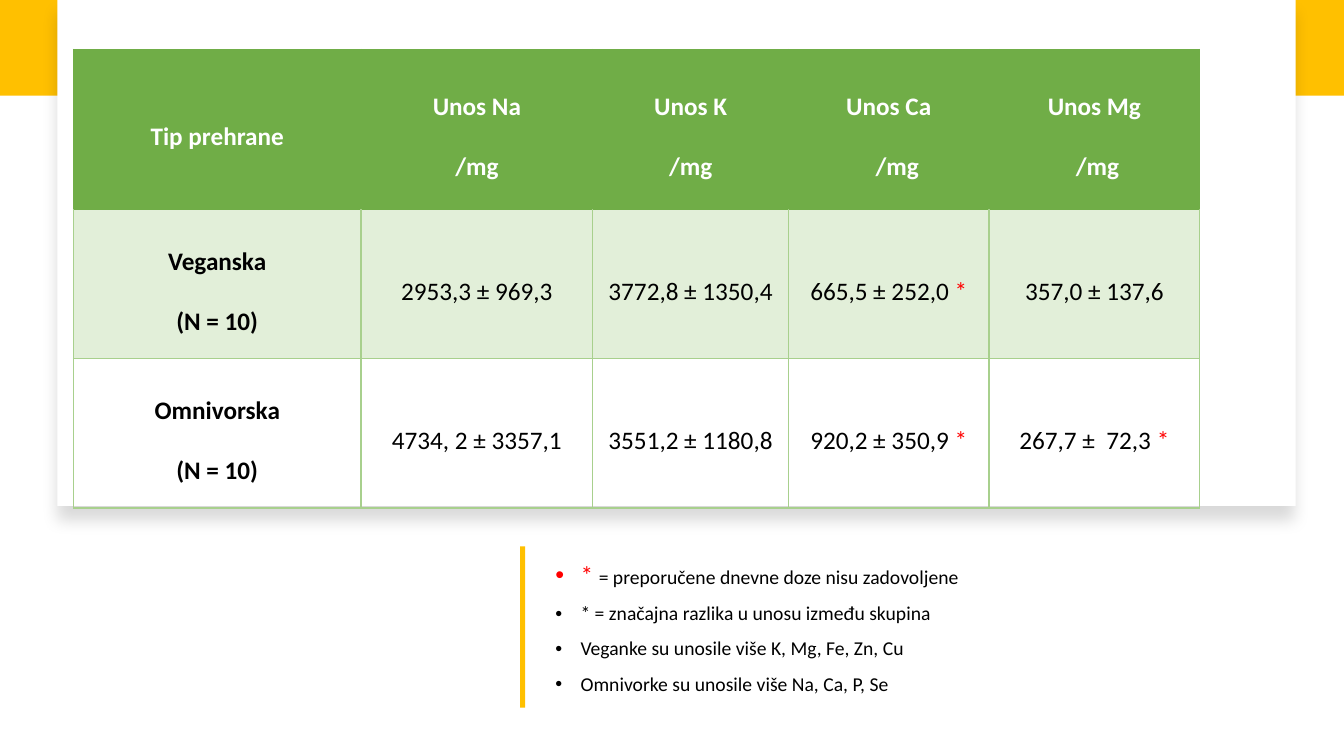
from dataclasses import dataclass

from lxml import etree
from pptx import Presentation
from pptx.dml import color
from pptx.enum import shapes, text
from pptx.oxml import ns
from pptx.util import Inches, Pt

GOLD, WHITE, BLACK, RED = "FFC000", "FFFFFF", "000000", "FF0000"
GREEN, PALE_GREEN, BORDER_GREEN = "70AD47", "E2EFD9", "A8D08D"


@dataclass(frozen=True)
class Box:
    left: float
    top: float
    width: float
    height: float
    fill: str = GOLD
    shadow: bool = False

    def place(self) -> list:
        return [Inches(v) for v in (self.left, self.top, self.width, self.height)]


@dataclass(frozen=True)
class Run:
    words: str
    color: str = BLACK
    size: int = 18
    bold: bool = False


@dataclass(frozen=True)
class Line:
    runs: tuple
    indent: float = 0


@dataclass(frozen=True)
class Row:
    height: float
    fill: str
    cells: tuple


def rgb(value: str) -> color.RGBColor:
    return color.RGBColor.from_string(value)


def apply(target, **values) -> None:
    for name, value in values.items():
        setattr(target, name, value)


def add_node(parent, tag: str, **attributes):
    return etree.SubElement(parent, ns.qn(tag), attributes)


def heading(element: str, indent: float = 0) -> tuple:
    return (Line((Run("Unos " + element, WHITE, bold=True),)),
            Line((Run("/mg", WHITE, bold=True),), indent))


def diet(name: str) -> tuple:
    return tuple(Line((Run(words, bold=True),)) for words in (name, "(N = 10)"))


def intake(words: str, starred: bool = False) -> tuple:
    if starred:
        return (Line((Run(words + " "), Run("*", RED))),)
    return (Line((Run(words),)),)


BOXES = (
    Box(0, 0, 13.33, 0.95),
    Box(0.57, 0, 12.28, 5.02, WHITE, True),
    Box(5.16, 5.42, 0.05, 1.6),
)
TABLE_BOX = Box(0.73, 0.49, 11.17, 4.55)
NOTES_BOX = Box(5.41, 5.44, 7.44, 1.6)
COLUMN_WIDTHS = (2.85, 2.3, 1.94, 1.99, 2.09)
ROWS = (
    Row(1.59, GREEN, ((Line((Run("Tip prehrane", WHITE, bold=True),)),),
                      heading("Na"), heading("K"), heading("Ca", 0.17), heading("Mg", 0.06))),
    Row(1.48, PALE_GREEN, (diet("Veganska"), intake("2953,3 ± 969,3"), intake("3772,8 ± 1350,4"),
                           intake("665,5 ± 252,0", True), intake("357,0 ± 137,6"))),
    Row(1.48, "", (diet("Omnivorska"), intake("4734, 2 ± 3357,1"), intake("3551,2 ± 1180,8"),
                   intake("920,2 ± 350,9", True), intake("267,7 ±  72,3", True))),
)
NOTES = (
    Line((Run("* ", RED), Run("= preporučene dnevne doze nisu zadovoljene", size=14))),
    Line((Run("* = značajna razlika u unosu između skupina", size=14),)),
    Line((Run("Veganke su unosile više K, Mg, Fe, Zn, Cu", size=14),)),
    Line((Run("Omnivorke su unosile više Na, Ca, P, Se", size=14),)),
)


def write_lines(frame, lines: tuple, **paragraph_format) -> None:
    for index, line in enumerate(lines):
        paragraph = frame.add_paragraph() if index else frame.paragraphs[0]
        apply(paragraph, **paragraph_format)
        if line.indent:
            paragraph._p.get_or_add_pPr().set("marL", str(Inches(line.indent)))
        for item in line.runs:
            run = paragraph.add_run()
            run.text = item.words
            apply(run.font, name="Calibri", size=Pt(item.size), bold=item.bold)
            run.font.color.rgb = rgb(item.color)


def draw_box(slide, box: Box) -> None:
    shape = slide.shapes.add_shape(shapes.MSO_SHAPE.RECTANGLE, *box.place())
    shape.shadow.inherit = False
    shape.fill.solid()
    shape.fill.fore_color.rgb = rgb(box.fill)
    shape.line.fill.background()
    if box.shadow:
        effects = shape._element.spPr.find(ns.qn("a:effectLst"))
        shadow = add_node(effects, "a:outerShdw", blurRad=str(Pt(11)), dist=str(Pt(10)),
                          dir="5400000", algn="t", rotWithShape="0")
        add_node(add_node(shadow, "a:srgbClr", val=BLACK), "a:alpha", val="15000")


def draw_borders(cell, edges: dict) -> None:
    properties = cell._tc.get_or_add_tcPr()
    for index, (side, edge_color) in enumerate(edges.items()):
        border = etree.Element(ns.qn("a:ln" + side), w=str(Pt(1)))
        add_node(add_node(border, "a:solidFill"), "a:srgbClr", val=edge_color)
        properties.insert(index, border)


def draw_table(slide) -> None:
    table = slide.shapes.add_table(len(ROWS), len(COLUMN_WIDTHS), *TABLE_BOX.place()).table
    apply(table, first_row=False, horz_banding=False)
    for column, width in zip(table.columns, COLUMN_WIDTHS):
        column.width = Inches(width)
    for row_index, row in enumerate(ROWS):
        table.rows[row_index].height = Inches(row.height)
        side_color = BORDER_GREEN if row_index else GREEN
        top_color = BORDER_GREEN if row_index > 1 else GREEN
        for column_index, lines in enumerate(row.cells):
            cell = table.cell(row_index, column_index)
            apply(cell, vertical_anchor=text.MSO_ANCHOR.MIDDLE, margin_left=Inches(0.13),
                  margin_right=Inches(0.13), margin_top=0, margin_bottom=0)
            if row.fill:
                cell.fill.solid()
                cell.fill.fore_color.rgb = rgb(row.fill)
            else:
                cell.fill.background()
            draw_borders(cell, {"L": side_color, "R": side_color, "T": top_color, "B": side_color})
            write_lines(cell.text_frame, lines, alignment=text.PP_ALIGN.CENTER,
                        line_spacing=1.5, space_after=Pt(10))


def draw_notes(slide) -> None:
    frame = slide.shapes.add_textbox(*NOTES_BOX.place()).text_frame
    apply(frame, word_wrap=True, vertical_anchor=text.MSO_ANCHOR.MIDDLE)
    write_lines(frame, NOTES, line_spacing=0.9, space_before=Pt(10))
    for paragraph in frame.paragraphs:
        properties = paragraph._p.get_or_add_pPr()
        properties.set("marL", str(Inches(0.25)))
        properties.set("indent", str(Inches(-0.25)))
        add_node(properties, "a:buFont", typeface="Arial")
        add_node(properties, "a:buChar", char="•")


def main() -> None:
    presentation = Presentation()
    apply(presentation, slide_width=Inches(13.33), slide_height=Inches(7.5))
    slide = presentation.slides.add_slide(presentation.slide_layouts[6])
    for box in BOXES:
        draw_box(slide, box)
    draw_notes(slide)
    draw_table(slide)
    presentation.save("out.pptx")


if __name__ == "__main__":
    main()
